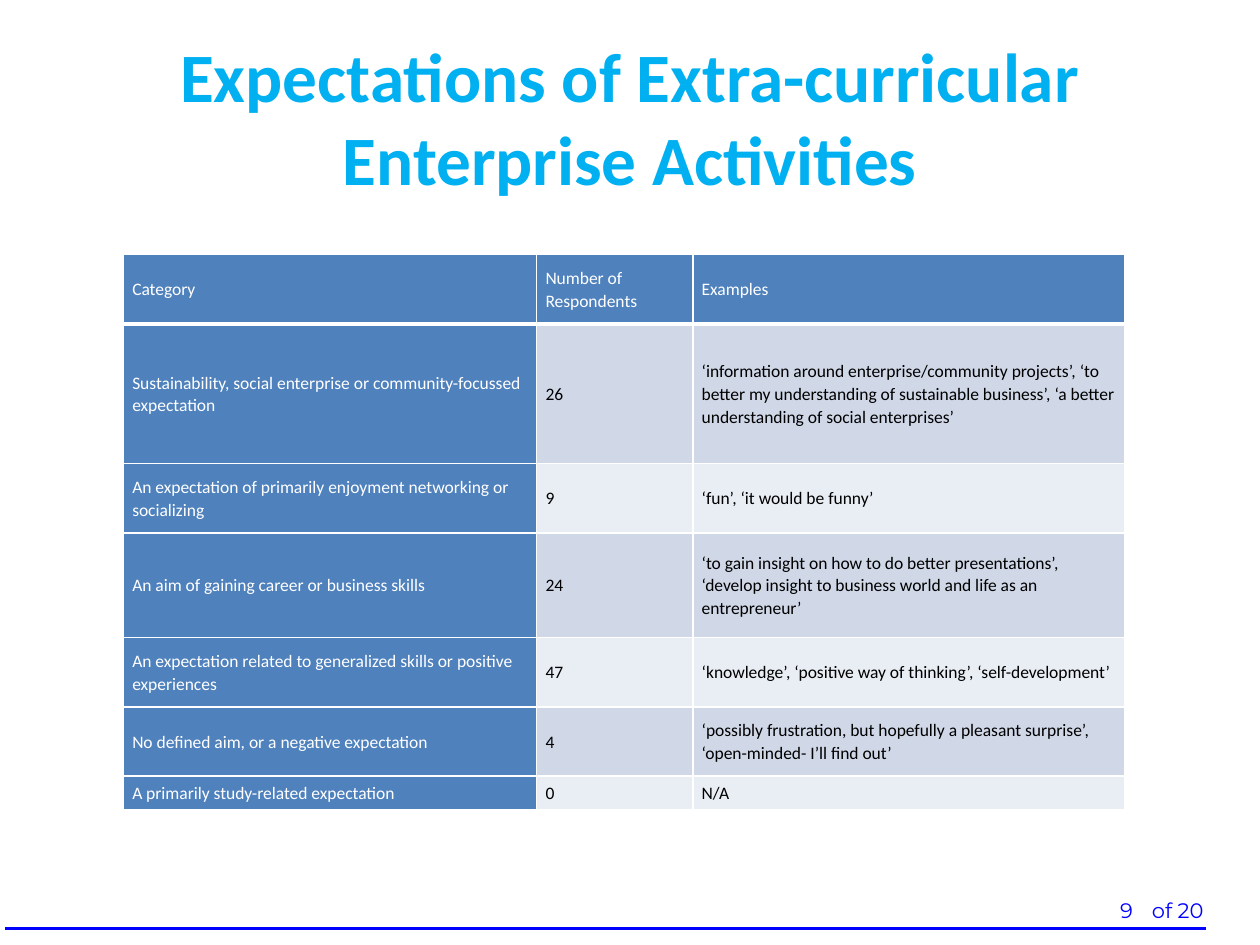
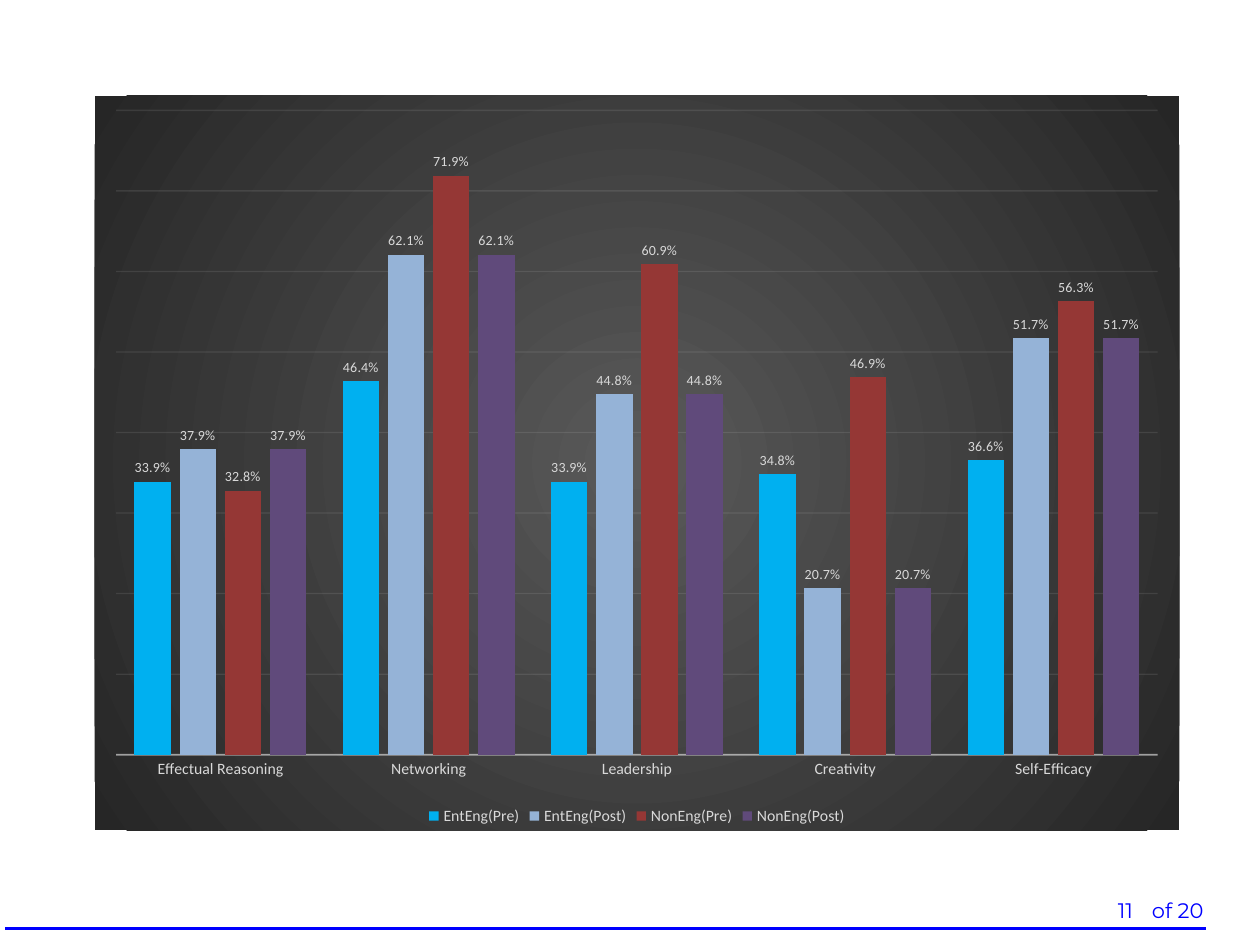
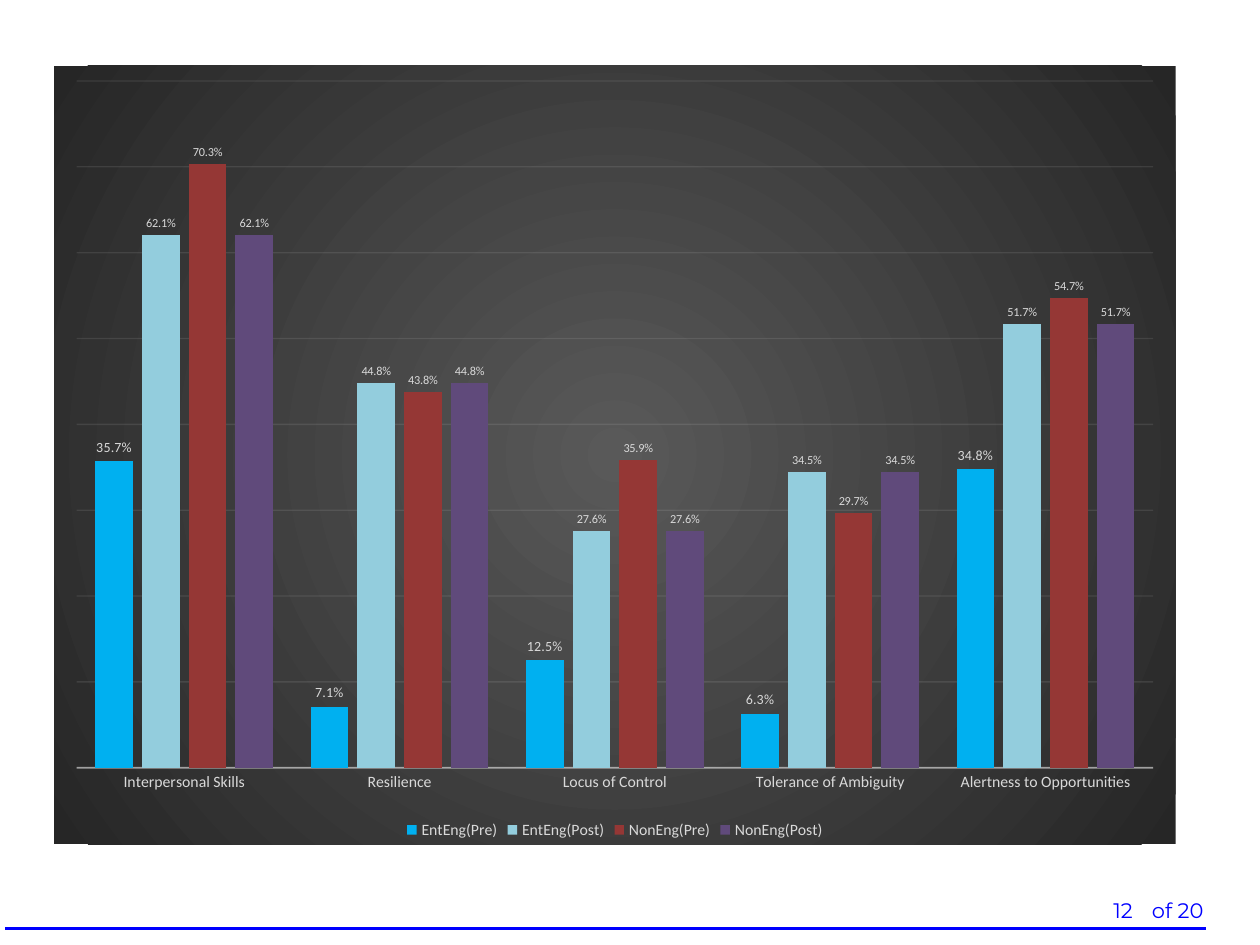
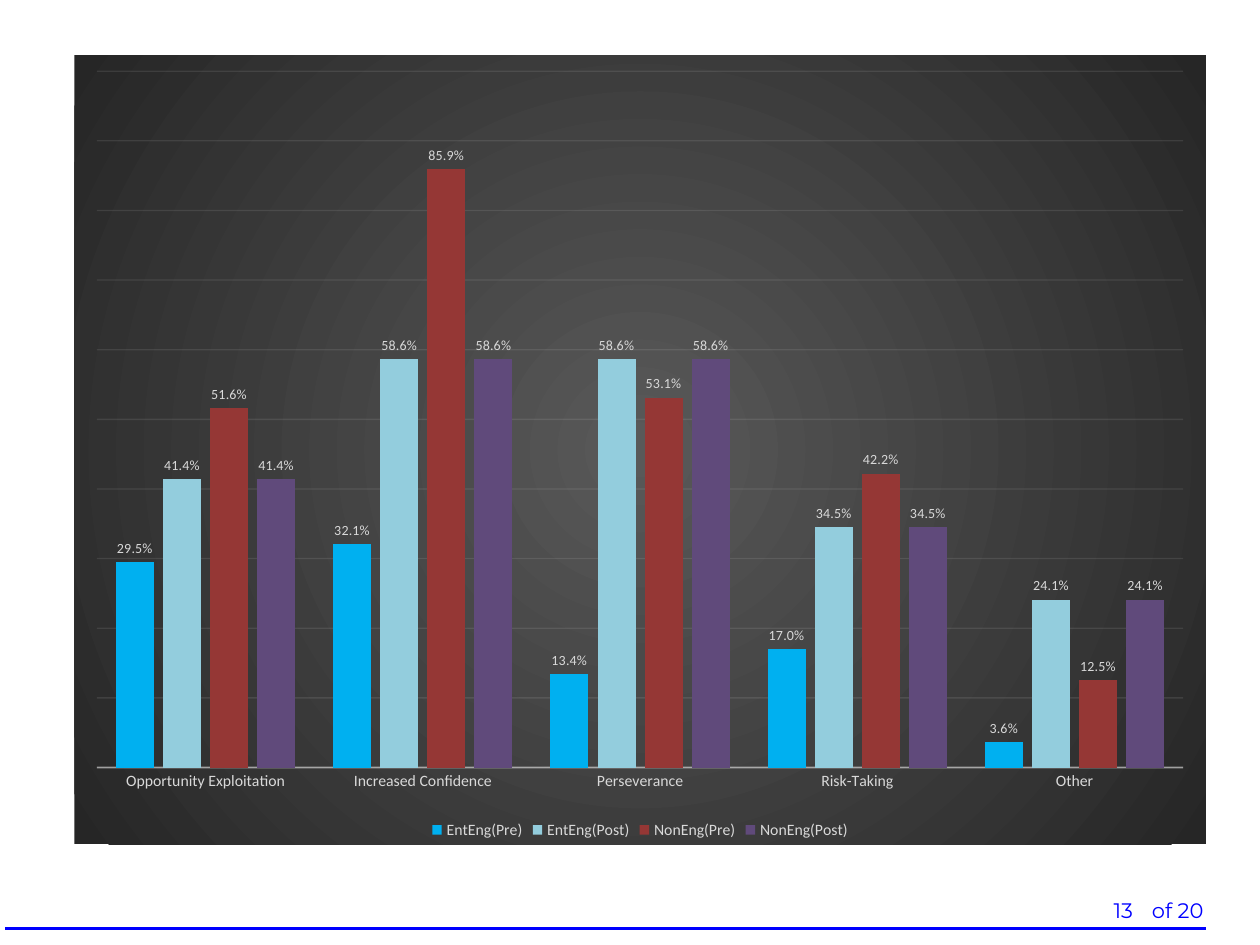
from pptx import Presentation
from pptx.chart.data import CategoryChartData
from pptx.dml.color import RGBColor
from pptx.enum.chart import XL_CHART_TYPE, XL_LABEL_POSITION, XL_LEGEND_POSITION, XL_TICK_MARK
from pptx.enum.shapes import MSO_CONNECTOR
from pptx.enum.text import MSO_ANCHOR, PP_ALIGN
from pptx.oxml import parse_xml
from pptx.oxml.ns import nsdecls
from pptx.oxml.xmlchemy import OxmlElement
from pptx.util import Inches, Pt

# Shared look
CYAN = RGBColor(0x00, 0xB0, 0xF0)
BLUE = RGBColor(0x00, 0x00, 0xFF)
WHITE = RGBColor(0xFF, 0xFF, 0xFF)
BLACK = RGBColor(0x00, 0x00, 0x00)
HEAD_FILL = RGBColor(0x4F, 0x81, 0xBD)
BAND_FILLS = RGBColor(0xD0, 0xD8, 0xE8), RGBColor(0xE9, 0xED, 0xF4)
LABEL_GREY = RGBColor(0xD9, 0xD9, 0xD9)
LINE_GREY = RGBColor(0xF2, 0xF2, 0xF2)
PANEL_INNER = RGBColor(0x59, 0x59, 0x59)
PANEL_OUTER = RGBColor(0x26, 0x26, 0x26)
PALE_BLUE = RGBColor(0x95, 0xB3, 0xD7)
PALE_AQUA = RGBColor(0x93, 0xCD, 0xDD)
RED = RGBColor(0x95, 0x37, 0x35)
PURPLE = RGBColor(0x60, 0x4A, 0x7B)
BODY_FONT = "Calibri"
FOOTER_FONT = "Montserrat"
PERCENT = "###0.0%"
TOTAL_PAGES = 20

# Table content
COL_WIDTHS = [3.28, 1.24, 3.43]
ROW_HEIGHTS = [0.55, 1.11, 0.55, 0.83, 0.55, 0.55, 0.27]
EXPECTATIONS = [
    ("Category", "Number of Respondents", "Examples"),
    ("Sustainability, social enterprise or community-focussed expectation", "26",
     "‘information around enterprise/community projects’, ‘to better my understanding of "
     "sustainable business’, ‘a better understanding of social enterprises’"),
    ("An expectation of primarily enjoyment networking or socializing", "9",
     "‘fun’, ‘it would be funny’"),
    ("An aim of gaining career or business skills", "24",
     "‘to gain insight on how to do better presentations’, ‘develop insight to business "
     "world and life as an entrepreneur’"),
    ("An expectation related to generalized skills or positive experiences", "47",
     "‘knowledge’, ‘positive way of thinking’, ‘self-development’"),
    ("No defined aim, or a negative expectation", "4",
     "‘possibly frustration, but hopefully a pleasant surprise’, ‘open-minded- I’ll find out’"),
    ("A primarily study-related expectation", "0", "N/A"),
]

# Chart content: page, box, post colour, label sizes, axis top, (category, values)
SERIES_NAMES = ["EntEng(Pre)", "EntEng(Post)", "NonEng(Pre)", "NonEng(Post)"]
CHARTS = [
    (11, (0.75, 0.76, 8.61, 5.83), PALE_BLUE, (8, 8, 8, 8), 0.8, [
        ("Effectual Reasoning", (0.339, 0.379, 0.328, 0.379)),
        ("Networking", (0.464, 0.621, 0.719, 0.621)),
        ("Leadership", (0.339, 0.448, 0.609, 0.448)),
        ("Creativity", (0.348, 0.207, 0.469, 0.207)),
        ("Self-Efficacy", (0.366, 0.517, 0.563, 0.517))]),
    (12, (0.43, 0.52, 8.9, 6.18), PALE_AQUA, (8, 7, 7, 7), 0.8, [
        ("Interpersonal Skills", (0.357, 0.621, 0.703, 0.621)),
        ("Resilience", (0.071, 0.448, 0.438, 0.448)),
        ("Locus of Control", (0.125, 0.276, 0.359, 0.276)),
        ("Tolerance of Ambiguity", (0.063, 0.345, 0.297, 0.345)),
        ("Alertness to Opportunities", (0.348, 0.517, 0.547, 0.517))]),
    (13, (0.59, 0.44, 8.98, 6.26), PALE_AQUA, (8, 8, 8, 8), 1.0, [
        ("Opportunity Exploitation", (0.295, 0.414, 0.516, 0.414)),
        ("Increased Confidence", (0.321, 0.586, 0.859, 0.586)),
        ("Perseverance", (0.134, 0.586, 0.531, 0.586)),
        ("Risk-Taking", (0.17, 0.345, 0.422, 0.345)),
        ("Other", (0.036, 0.241, 0.125, 0.241))]),
]


def set_font(font, size, color, name=BODY_FONT, bold=False):
    font.size, font.name, font.bold = Pt(size), name, bold
    font.color.rgb = color


def add_text(s, box, text, align, *font):
    sp = s.shapes.add_textbox(*map(Inches, box))
    tf = sp.text_frame
    tf.word_wrap = True
    tf.vertical_anchor = MSO_ANCHOR.MIDDLE
    p = tf.paragraphs[0]
    p.alignment = align
    r = p.add_run()
    r.text = text
    set_font(r.font, *font)


def add_footer(s, page):
    add_text(s, (8.78, 7, 0.87, 0.45), f"of {TOTAL_PAGES}", PP_ALIGN.RIGHT, 12, BLUE, FOOTER_FONT)
    rule = s.shapes.add_connector(MSO_CONNECTOR.STRAIGHT, Inches(0.04), Inches(7.37),
                                  Inches(9.57), Inches(7.37))
    rule.line.color.rgb = BLUE
    rule.line.width = Pt(1.75)
    rule._element.spPr.append(OxmlElement("a:effectLst"))
    add_text(s, (8.62, 7, 0.47, 0.45), str(page), PP_ALIGN.RIGHT, 12, BLUE, FOOTER_FONT)


def new_slide(prs, page):
    s = prs.slides.add_slide(prs.slide_layouts[6])
    add_footer(s, page)
    return s


# Table
def set_borders(cell, bottom):
    tcPr = cell._tc.get_or_add_tcPr()
    for side, width in (("L", 1), ("R", 1), ("T", 1), ("B", bottom)):
        tcPr.append(parse_xml(
            f'<a:ln{side} {nsdecls("a")} w="{Pt(width)}"><a:solidFill>'
            f'<a:srgbClr val="{WHITE}"/></a:solidFill></a:ln{side}>'))


def fill_cell(cell, text, fill, color, bottom):
    set_borders(cell, bottom)
    cell.fill.solid()
    cell.fill.fore_color.rgb = fill
    cell.vertical_anchor = MSO_ANCHOR.MIDDLE
    cell.margin_left = cell.margin_right = Inches(0.07)
    cell.margin_top = cell.margin_bottom = 0
    p = cell.text_frame.paragraphs[0]
    p.line_spacing = 1.07
    p.space_after = Pt(8)
    r = p.add_run()
    r.text = text
    set_font(r.font, 10, color)


def add_expectations_table(s, left, top):
    table = s.shapes.add_table(
        len(ROW_HEIGHTS), len(COL_WIDTHS), Inches(left), Inches(top),
        Inches(sum(COL_WIDTHS)), Inches(sum(ROW_HEIGHTS))).table
    for column, width in zip(table.columns, COL_WIDTHS):
        column.width = Inches(width)
    for i, (row, height) in enumerate(zip(table.rows, ROW_HEIGHTS)):
        row.height = Inches(height)
        for j, text in enumerate(EXPECTATIONS[i]):
            is_head = i == 0 or j == 0
            fill = HEAD_FILL if is_head else BAND_FILLS[(i - 1) % 2]
            fill_cell(table.cell(i, j), text, fill, WHITE if is_head else BLACK,
                      3 if i == 0 else 1)


def table_slide(prs, page):
    s = new_slide(prs, page)
    add_text(s, (0.5, 0.3, 9, 1.25), "Expectations of Extra-curricular Enterprise Activities",
             PP_ALIGN.CENTER, 39.6, CYAN, BODY_FONT, True)
    add_expectations_table(s, 0.98, 2.02)


# Charts
def style_line(holder, element, width, alpha):
    line = holder.format.line
    line.color.rgb = LINE_GREY
    line.width = Pt(width)
    for clr in element.xpath("./c:spPr/a:ln//a:srgbClr"):
        clr.append(parse_xml(f'<a:alpha {nsdecls("a")} val="{alpha * 1000}"/>'))


def add_panel(chart):
    """Radial dark background behind the whole chart."""
    panel = parse_xml(
        f'<c:spPr {nsdecls("c", "a")}><a:gradFill><a:gsLst>'
        f'<a:gs pos="0"><a:srgbClr val="{PANEL_INNER}"/></a:gs>'
        f'<a:gs pos="100000"><a:srgbClr val="{PANEL_OUTER}"/></a:gs></a:gsLst>'
        '<a:path path="circle"><a:fillToRect l="50000" t="50000" r="50000" b="50000"/></a:path>'
        '</a:gradFill><a:ln><a:noFill/></a:ln></c:spPr>')
    chart._chartSpace.xpath("./c:txPr")[0].addprevious(panel)


def style_axes(chart, top):
    cat = chart.category_axis
    cat.major_tick_mark = cat.minor_tick_mark = XL_TICK_MARK.NONE
    set_font(cat.tick_labels.font, 9, LABEL_GREY)
    style_line(cat, cat._element, 1, 54)
    val = chart.value_axis
    val.visible = False
    val.minimum_scale, val.maximum_scale, val.major_unit = 0, top, 0.1
    val.tick_labels.number_format = PERCENT
    val.tick_labels.number_format_is_linked = False
    grid = val.major_gridlines
    style_line(grid, val._element.xpath("./c:majorGridlines")[0], 0.75, 10)


def style_series(plot, colors, label_sizes):
    plot.gap_width, plot.overlap = 100, -24
    plot.vary_by_categories = False
    for series, color, size in zip(plot.series, colors, label_sizes):
        series.format.fill.solid()
        series.format.fill.fore_color.rgb = color
        labels = series.data_labels
        labels.show_value = True
        labels.position = XL_LABEL_POSITION.OUTSIDE_END
        labels.number_format = PERCENT
        labels.number_format_is_linked = False
        set_font(labels.font, size, LABEL_GREY)


def chart_slide(prs, page, box, post_color, label_sizes, top, rows):
    s = new_slide(prs, page)
    categories, values = zip(*rows)
    data = CategoryChartData(number_format=PERCENT)
    data.categories = categories
    for name, series_values in zip(SERIES_NAMES, zip(*values)):
        data.add_series(name, series_values)
    chart = s.shapes.add_chart(XL_CHART_TYPE.COLUMN_CLUSTERED, *map(Inches, box), data).chart
    set_font(chart.font, 10, BLACK)
    chart.has_title = False
    chart.has_legend = True
    chart.legend.position = XL_LEGEND_POSITION.BOTTOM
    chart.legend.include_in_layout = False
    set_font(chart.legend.font, 9, LABEL_GREY)
    add_panel(chart)
    style_axes(chart, top)
    style_series(chart.plots[0], (CYAN, post_color, RED, PURPLE), label_sizes)


def main():
    prs = Presentation()
    prs.slide_width, prs.slide_height = Inches(10), Inches(7.5)
    table_slide(prs, 9)
    for chart_args in CHARTS:
        chart_slide(prs, *chart_args)
    prs.save("out.pptx")


if __name__ == "__main__":
    main()
